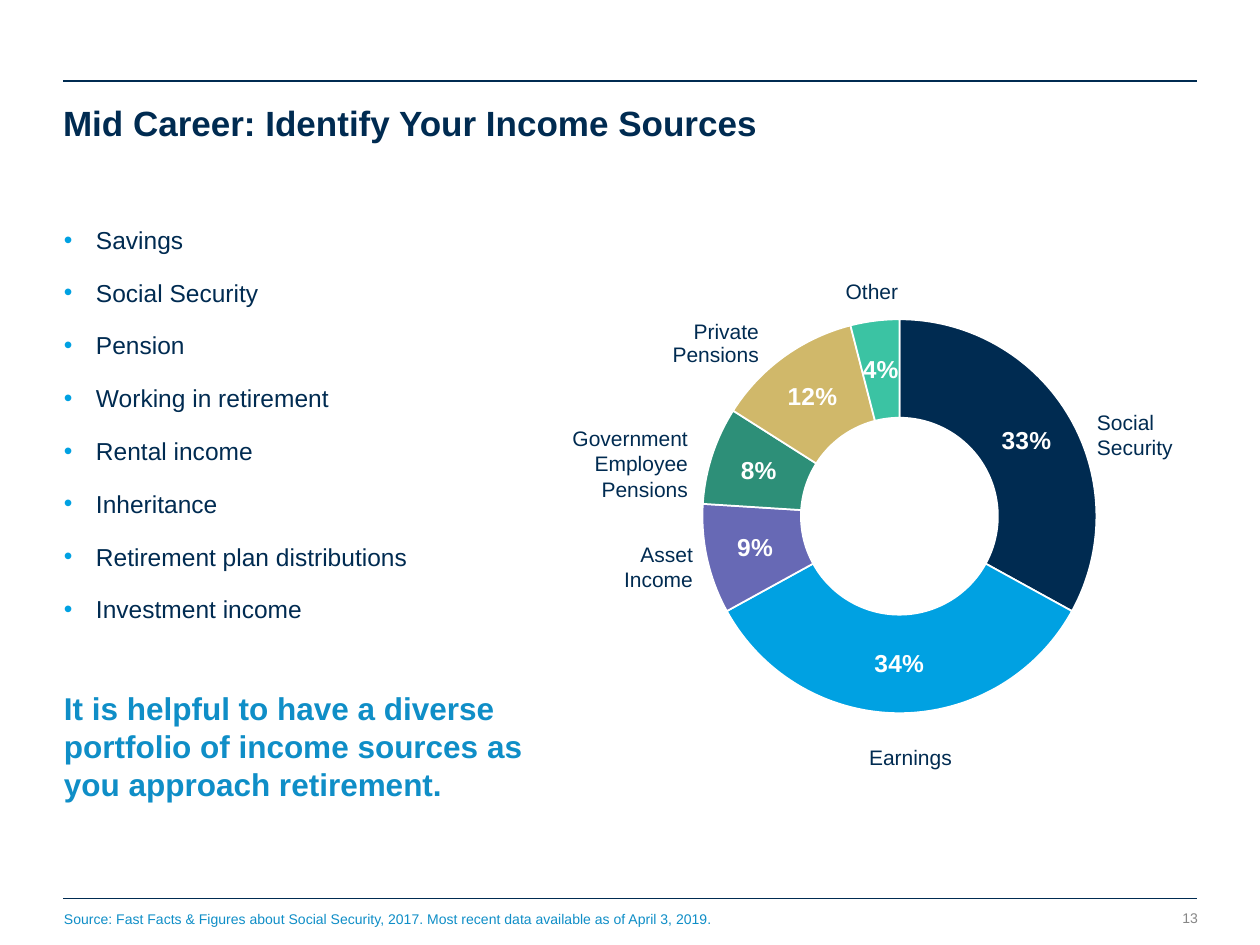
from lxml import etree
from pptx import Presentation
from pptx.chart.data import CategoryChartData
from pptx.dml.color import RGBColor
from pptx.enum.chart import XL_CHART_TYPE
from pptx.enum.shapes import MSO_CONNECTOR
from pptx.enum.text import MSO_ANCHOR, MSO_AUTO_SIZE, PP_ALIGN
from pptx.oxml import parse_xml
from pptx.oxml.ns import nsdecls, qn
from pptx.util import Emu, Pt

LEFT, MID, RIGHT = PP_ALIGN.LEFT, PP_ALIGN.CENTER, PP_ALIGN.RIGHT
TOP, CENTER, BASE = MSO_ANCHOR.TOP, MSO_ANCHOR.MIDDLE, MSO_ANCHOR.BOTTOM
RING = XL_CHART_TYPE.DOUGHNUT
LINE = MSO_CONNECTOR.STRAIGHT
FIXED = MSO_AUTO_SIZE.NONE

NAVY = RGBColor(0x00, 0x2B, 0x51)
SKY = RGBColor(0x00, 0xA1, 0xE2)
BLUE = RGBColor(0x0F, 0x8E, 0xC7)
GRAY = RGBColor(0x86, 0x86, 0x86)
WHITE = RGBColor(0xFF, 0xFF, 0xFF)
PLUM = RGBColor(0x67, 0x69, 0xB5)
GREEN = RGBColor(0x2D, 0x8F, 0x78)
GOLD = RGBColor(0xD0, 0xB8, 0x6A)
MINT = RGBColor(0x3B, 0xC3, 0xA3)

FONT = "Arial"
DPI = 126

SOURCES = ["Savings", "Social Security", "Pension", "Working in retirement",
           "Rental income", "Inheritance", "Retirement plan distributions",
           "Investment income"]
SHARES = [(0.33, NAVY), (0.34, SKY), (0.09, PLUM),
          (0.08, GREEN), (0.12, GOLD), (0.04, MINT)]

# Ring labels: text, box, alignment, line spacing
LABELS = [
    ("Social\nSecurity", (1097, 410, 157, 50), LEFT, 1),
    ("Earnings", (832, 747, 157, 23), MID, 0.9),
    ("Private Pensions", (657, 321, 102, 46), RIGHT, 0.9),
    ("Asset\vIncome", (536, 542, 157, 50), RIGHT, 1),
    ("Government Employee Pensions", (531, 425, 157, 77), RIGHT, 1),
    ("Other", (821, 281, 102, 23), MID, 0.9),
]


def px(n):
    return Emu(round(n * 914400 / DPI))


def style(font, size, color, bold=False):
    font.name, font.size, font.bold = FONT, Pt(size), bold
    font.color.rgb = color


def dot(para, color):
    """Give a paragraph a hanging bullet."""
    props = para._p.get_or_add_pPr()
    props.set("marL", str(px(32)))
    props.set("indent", str(-px(32)))
    tint = etree.SubElement(props, qn("a:buClr"))
    etree.SubElement(tint, qn("a:srgbClr")).set("val", str(color))
    etree.SubElement(props, qn("a:buFont")).set("typeface", FONT)
    etree.SubElement(props, qn("a:buChar")).set("char", "•")


def write(shape, text, box, size=12, color=NAVY, bold=False, align=LEFT,
          anchor=TOP, lead=1, gap=0, bullet=None, wrap=True, foot=0):
    """Place a text shape and fill it, one paragraph a line."""
    shape.left, shape.top, shape.width, shape.height = map(px, box)
    frame = shape.text_frame
    frame.word_wrap, frame.auto_size = wrap, FIXED
    frame.vertical_anchor = anchor
    frame.margin_left = frame.margin_right = frame.margin_top = 0
    frame.margin_bottom = px(foot)
    frame.text = text
    for i, para in enumerate(frame.paragraphs):
        para.alignment, para.line_spacing = align, lead
        para.space_before = Pt(gap if i else 0)
        if bullet:
            dot(para, bullet)
        for run in para.runs:
            style(run.font, size, color, bold)


def label(slide, text, box, **form):
    write(slide.shapes.add_textbox(0, 0, 0, 0), text, box, **form)


def rule(slide, y, width):
    line = slide.shapes.add_connector(LINE, px(63), px(y), px(1197), px(y))
    line.line.color.rgb, line.line.width = NAVY, Pt(width)
    etree.SubElement(line._element.spPr, qn("a:effectLst"))


def ring(slide, box):
    """Draw the doughnut of income shares."""
    data = CategoryChartData(number_format="0%")
    data.categories = [str(i + 1) for i in range(len(SHARES))]
    data.add_series("Series 1", [share for share, _ in SHARES])
    chart = slide.shapes.add_chart(RING, *map(px, box), data).chart
    chart.has_legend = chart.has_title = False
    style(chart.font, 12, WHITE, True)

    plot = chart.plots[0]
    plot.vary_by_categories = True
    plot._element.find(qn("c:holeSize")).set("val", "60")
    for i, (_, color) in enumerate(SHARES):
        form = plot.series[0].points[i].format
        form.fill.solid()
        form.fill.fore_color.rgb = color
        form.line.color.rgb, form.line.width = WHITE, Pt(1)

    plot.has_data_labels = True
    marks = plot.data_labels
    marks.show_value, marks.show_percentage = True, False
    marks.number_format, marks.number_format_is_linked = "0%", False
    style(marks.font, 14, WHITE, True)

    # Fixed plot area
    area = chart._chartSpace.chart.plotArea
    for old in area.findall(qn("c:layout")):
        area.remove(old)
    spots = {"x": 0.05, "y": 0.04, "w": 0.9, "h": 0.91}
    parts = "".join(f'<c:{k} val="{v}"/>' for k, v in spots.items())
    area.insert(0, parse_xml(
        f'<c:layout {nsdecls("c")}><c:manualLayout>'
        '<c:layoutTarget val="inner"/><c:xMode val="edge"/>'
        f'<c:yMode val="edge"/>{parts}</c:manualLayout></c:layout>'))


def main():
    deck = Presentation()
    deck.slide_width, deck.slide_height = px(1260), px(945)
    slide = deck.slides.add_slide(deck.slide_layouts[1])

    # Frame
    rule(slide, 81, 1)
    rule(slide, 898, 0.5)
    label(slide, "13", (1181, 910, 17, 16), size=8, color=GRAY,
          align=RIGHT, wrap=False)

    # Title and list
    write(slide.shapes.title, "Mid Career: Identify Your Income Sources",
          (63, 101, 1134, 43), size=20, bold=True)
    write(slide.placeholders[1], "\n".join(SOURCES), (64, 219, 460, 411),
          size=14, lead=1.2, gap=10, bullet=SKY)

    # Source line
    label(slide, "Source: Fast Facts & Figures about Social Security, 2017. "
          "Most recent data available as of April 3, 2019.",
          (64, 891, 1133, 40), size=8, color=BLUE, anchor=BASE,
          lead=0.9, foot=3)

    # Chart with its labels
    ring(slide, (614, 302, 571, 433))
    for text, box, align, lead in LABELS:
        label(slide, text, box, align=align, lead=lead, anchor=CENTER)

    # Takeaway
    label(slide, "It is helpful to have a diverse portfolio of income "
          "sources as\vyou approach retirement.", (64, 689, 566, 115),
          size=18, color=BLUE, bold=True)

    deck.save("out.pptx")


if __name__ == "__main__":
    main()
